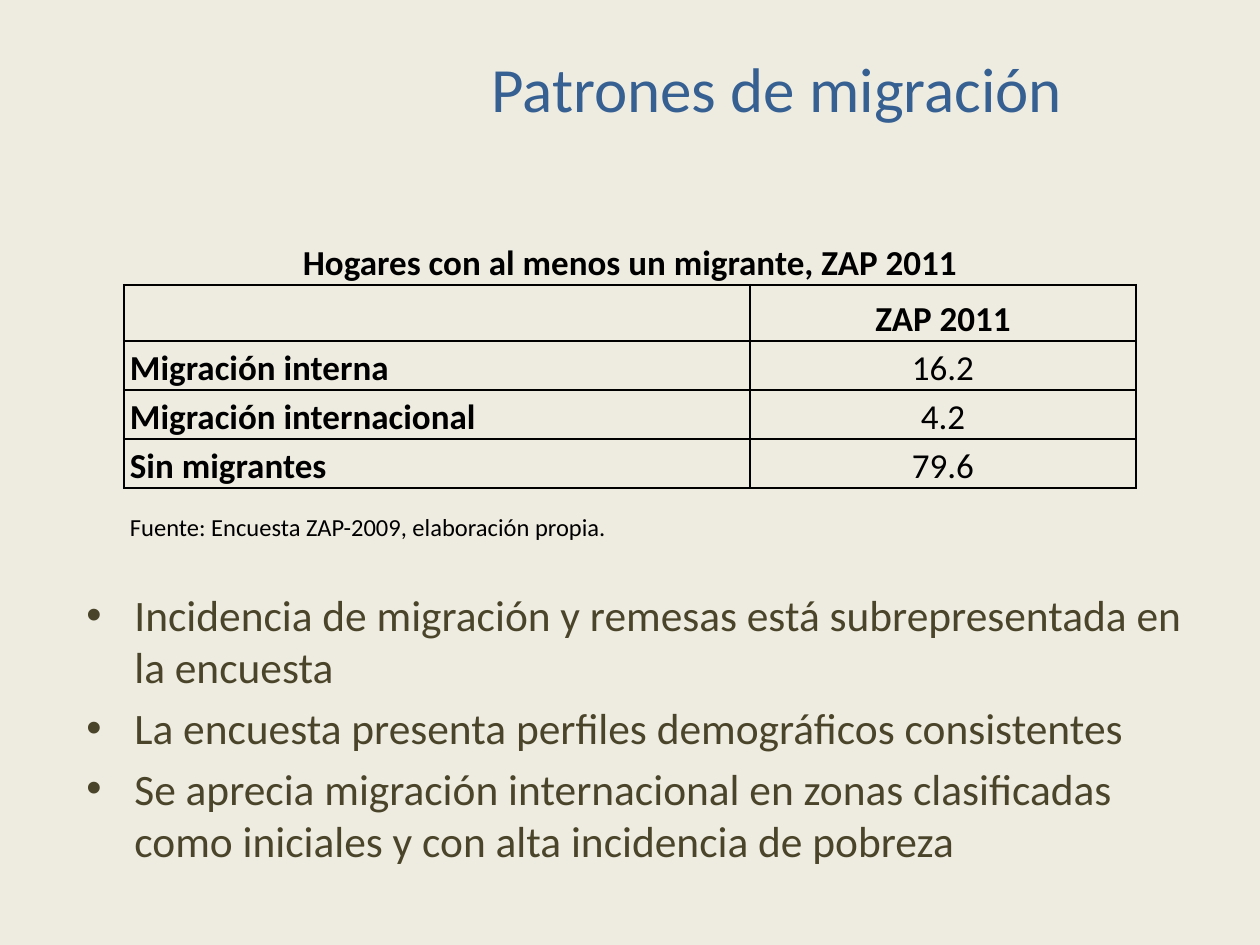
from dataclasses import dataclass

from pptx import Presentation
from pptx import util as u
from pptx.dml.color import RGBColor
from pptx.enum import text
from pptx.oxml.ns import qn
from lxml import etree

EMU_PER_PX = 914400 / 126
BLACK, BLUE, OLIVE, CREAM = "000000", "376092", "4A452A", "EEECE1"
LEFT, CENTER = text.PP_ALIGN.LEFT, text.PP_ALIGN.CENTER


@dataclass
class Style:
    """Format of a paragraph."""
    size: float
    color: str = BLACK
    bold: bool = False
    align: text.PP_ALIGN = LEFT
    line_spacing: float = 1.0
    bullet: bool = False


@dataclass
class TextBlock:
    """A text box with paragraphs of one style."""
    left: int
    top: int
    width: int
    height: int
    lines: list[str]
    style: Style
    anchor: text.MSO_ANCHOR


@dataclass
class Row:
    """A table row with its height and the style of each cell."""
    height: int
    cells: list[tuple[str, Style]]
    framed: bool = True


def px(length: int) -> u.Emu:
    """Turn pixels into EMU."""
    return u.Emu(round(length * EMU_PER_PX))


def color(value: str) -> RGBColor:
    """Turn a hex string into a colour."""
    return RGBColor.from_string(value)


def apply(target, values: dict) -> None:
    """Set each attribute of the target."""
    for name, value in values.items():
        setattr(target, name, value)


def write(para, words: str, style: Style) -> None:
    """Write words into a paragraph in a style."""
    if style.bullet:
        properties = para._p.get_or_add_pPr()
        properties.set("marL", str(px(48)))
        properties.set("indent", str(-px(48)))
        etree.SubElement(properties, qn("a:buFont"), typeface="Arial")
        etree.SubElement(properties, qn("a:buChar"), char="•")
    apply(para, {"alignment": style.align, "line_spacing": style.line_spacing})
    span = para.add_run()
    span.text = words
    apply(span.font, {"name": "Calibri", "size": u.Pt(style.size), "bold": style.bold})
    span.font.color.rgb = color(style.color)


def add_text(page, block: TextBlock) -> None:
    """Add a text box with its paragraphs."""
    box = page.shapes.add_textbox(*map(px, (block.left, block.top, block.width, block.height)))
    frame = box.text_frame
    apply(frame, {"word_wrap": True, "vertical_anchor": block.anchor})
    for index, line in enumerate(block.lines):
        para = frame.add_paragraph() if index else frame.paragraphs[0]
        write(para, line, block.style)
        if index:
            para.space_before = u.Pt(5)


def set_borders(cell, widths: dict[str, float]) -> None:
    """Draw the cell's borders in points, where zero means none."""
    properties = cell._tc.get_or_add_tcPr()
    for side in "LRTB":
        width = widths.get(side, 0)
        line = etree.SubElement(properties, qn(f"a:ln{side}"), w=str(u.Pt(width)))
        if width:
            fill = etree.SubElement(line, qn("a:solidFill"))
            etree.SubElement(fill, qn("a:srgbClr"), val=BLACK)
        else:
            etree.SubElement(line, qn("a:noFill"))


def border_widths(rows: list[Row], index: int, column: int) -> dict[str, float]:
    """Give a framed cell thick outer and thin inner borders."""
    if not rows[index].framed:
        sides = {"B": index + 1, "T": index - 1}
        return {side: 1.5 for side, near in sides.items()
                if 0 <= near < len(rows) and rows[near].framed}
    return {
        "L": 1 if column else 1.5,
        "R": 1.5 if column else 1,
        "T": 1 if rows[index - 1].framed else 1.5,
        "B": 1 if rows[index + 1].framed else 1.5,
    }


def add_grid(page, left: int, top: int, widths: list[int], rows: list[Row]) -> None:
    """Add the table, merging the rows outside the frame."""
    height = sum(row.height for row in rows)
    table = page.shapes.add_table(
        len(rows), len(widths), px(left), px(top), px(sum(widths)), px(height)).table
    apply(table, {"first_row": False, "horz_banding": False})
    for column, width in zip(table.columns, widths):
        column.width = px(width)
    for index, row in enumerate(rows):
        table.rows[index].height = px(row.height)
        for column in range(len(widths)):
            cell = table.cell(index, column)
            set_borders(cell, border_widths(rows, index, column))
            cell.fill.background()
            apply(cell, {"margin_left": px(6), "margin_right": px(6), "margin_top": 0,
                         "margin_bottom": 0, "vertical_anchor": text.MSO_ANCHOR.BOTTOM})
        if not row.framed:
            table.cell(index, 0).merge(table.cell(index, len(widths) - 1))
        for column, (words, style) in enumerate(row.cells):
            if words:
                write(table.cell(index, column).text_frame.paragraphs[0], words, style)


def main() -> None:
    """Build the slide and save it."""
    deck = Presentation()
    apply(deck, {"slide_width": px(1260), "slide_height": px(945)})
    page = deck.slides.add_slide(deck.slide_layouts[6])
    page.background.fill.solid()
    page.background.fill.fore_color.rgb = color(CREAM)

    add_text(page, TextBlock(
        357, 38, 840, 98, ["Patrones de migración"],
        Style(36, BLUE, align=CENTER), text.MSO_ANCHOR.MIDDLE))
    add_text(page, TextBlock(
        74, 582, 1134, 262, [
            "Incidencia de migración y remesas está subrepresentada en la encuesta",
            "La encuesta presenta perfiles demográficos consistentes",
            "Se aprecia migración internacional en zonas clasificadas como iniciales "
            "y con alta incidencia de pobreza",
        ], Style(24.8, OLIVE, bullet=True), text.MSO_ANCHOR.TOP))

    heading = Style(20, bold=True, align=CENTER, line_spacing=1.15)
    label = Style(20, bold=True, line_spacing=1.15)
    number = Style(20, align=CENTER, line_spacing=1.15)
    source = Style(14, bold=False, line_spacing=1.15)
    shares = {"Migración interna": "16.2", "Migración internacional": "4.2",
              "Sin migrantes": "79.6"}
    add_grid(page, 124, 224, [626, 386], [
        Row(61, [("Hogares con al menos un migrante, ZAP 2011", heading)], framed=False),
        Row(56, [("", heading), ("ZAP 2011", heading)]),
        *(Row(49, [(name, label), (share, number)]) for name, share in shares.items()),
        Row(55, [("Fuente: Encuesta ZAP-2009, elaboración propia.", source)], framed=False),
    ])
    deck.save("out.pptx")


if __name__ == "__main__":
    main()
